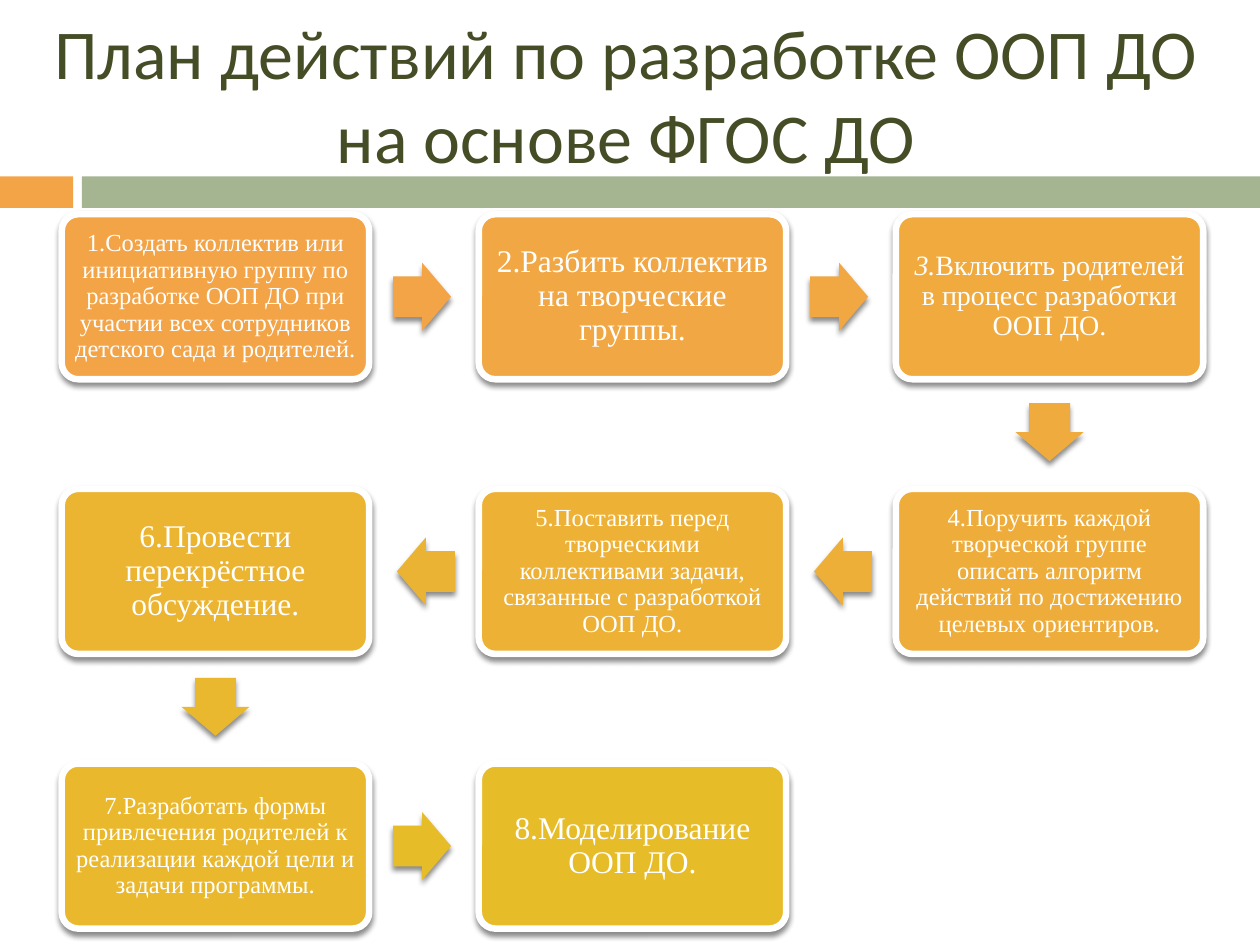
import pptx
import pptx.util
import pptx.dml.color
import pptx.enum.shapes
import pptx.enum.text
from lxml import etree

Inches, Pt = pptx.util.Inches, pptx.util.Pt
Shape = pptx.enum.shapes.MSO_SHAPE
Align = pptx.enum.text.PP_ALIGN
Anchor = pptx.enum.text.MSO_ANCHOR
Fit = pptx.enum.text.MSO_AUTO_SIZE

# Content
TITLE = "План действий по разработке ООП ДО на основе ФГОС ДО"
# column, row, fill, text size, text
STEPS = [
    (0, 0, "F3A447", "small", "1.Создать коллектив или инициативную группу по разработке ООП ДО "
                              "при участии всех сотрудников детского сада и родителей."),
    (1, 0, "F1A743", "large", "2.Разбить коллектив на творческие группы."),
    (2, 0, "F0AA3E", "medium", "3.Включить родителей в процесс разработки ООП ДО."),
    (2, 1, "EEAD3A", "small", "4.Поручить каждой творческой группе описать алгоритм действий "
                              "по достижению целевых ориентиров."),
    (1, 1, "EDB135", "small", "5.Поставить перед творческими коллективами задачи, "
                              "связанные с разработкой ООП ДО."),
    (0, 1, "EBB431", "large", "6.Провести перекрёстное обсуждение."),
    (0, 2, "E9B82D", "small", "7.Разработать формы привлечения родителей к реализации "
                              "каждой цели и задачи программы."),
    (1, 2, "E7BC29", "large", "8.Моделирование ООП ДО."),
]
ARROWS = ["F3A447", "F1A742", "EFAB3D", "EDAF38", "EBB333", "E9B82E", "E7BC29"]
SLANTED = "3."  # step number set in italics

THEME = {
    "title": {"name": "Calibri", "size": 40, "color": "444D26"},
    "small": {"name": "Times New Roman", "size": 14, "color": "FFFFFF"},
    "medium": {"name": "Times New Roman", "size": 16, "color": "FFFFFF"},
    "large": {"name": "Times New Roman", "size": 18, "color": "FFFFFF"},
    "edge": "FFFFFF", "orange": "F3A447", "green": "A5B592",
}

# Grid: first box, box size, steps between boxes, arrow size and gap
LEFT, TOP, WIDE, HIGH = 0.49, 1.7, 2.44, 1.31
STEP_X, STEP_Y = 3.31, 2.18
LONG, THICK, GAP = 0.46, 0.54, 0.19


def color(code):
    return pptx.dml.color.RGBColor.from_string(code)


def style(font, look):
    values = {"name": look["name"], "size": Pt(look["size"]), "bold": False}
    for key, value in values.items():
        setattr(font, key, value)
    font.color.rgb = color(look["color"])


def setup(frame, inset=None):
    values = {"word_wrap": True, "auto_size": Fit.NONE, "vertical_anchor": Anchor.MIDDLE}
    if inset is not None:
        for side in ("left", "right", "top", "bottom"):
            values["margin_" + side] = Inches(inset)
    for key, value in values.items():
        setattr(frame, key, value)


def draw(kind, x, y, w, h, fill):
    shape = slide.shapes.add_shape(kind, *map(Inches, (x, y, w, h)))
    shape.shadow.inherit = False
    shape.fill.solid()
    shape.fill.fore_color.rgb = color(fill)
    shape.line.fill.background()
    return shape


def shade(shape):
    effects = shape.element.spPr.find(pptx.oxml.ns.qn("a:effectLst"))
    effects.append(etree.fromstring(
        '<a:outerShdw xmlns:a="http://schemas.openxmlformats.org/drawingml/2006/main" '
        f'blurRad="{Pt(3)}" dist="{Pt(2.4)}" dir="5400000" rotWithShape="0">'
        '<a:srgbClr val="000000"><a:alpha val="45000"/></a:srgbClr></a:outerShdw>'))


def add_box(col, row, fill, size, text):
    box = draw(Shape.ROUNDED_RECTANGLE, LEFT + col * STEP_X, TOP + row * STEP_Y, WIDE, HIGH, fill)
    box.adjustments[0] = 0.1
    box.line.color.rgb = color(THEME["edge"])
    box.line.width = Pt(3.75)
    shade(box)
    setup(box.text_frame, 0.06 if size == "small" else 0.07)
    para = box.text_frame.paragraphs[0]
    para.alignment = Align.CENTER
    para.line_spacing = 0.9
    parts = [SLANTED, text[len(SLANTED):]] if text.startswith(SLANTED) else [text]
    for part in parts:
        run = para.add_run()
        run.text = part
        style(run.font, THEME[size])
        run.font.italic = part == SLANTED


def add_arrow(start, end, fill):
    dx, dy = end[0] - start[0], end[1] - start[1]
    x = LEFT + start[0] * STEP_X + WIDE / 2 + dx * (WIDE / 2 + GAP + LONG / 2)
    y = TOP + start[1] * STEP_Y + HIGH / 2 + dy * (HIGH / 2 + GAP + LONG / 2)
    arrow = draw(Shape.RIGHT_ARROW, x - LONG / 2, y - THICK / 2, LONG, THICK, fill)
    arrow.adjustments[0], arrow.adjustments[1] = 0.6, 0.5
    arrow.rotation = {(1, 0): 0, (0, 1): 90, (-1, 0): 180}[dx, dy]
    shade(arrow)


deck = pptx.Presentation()
deck.slide_width, deck.slide_height = Inches(10), Inches(7.5)
slide = deck.slides.add_slide(deck.slide_layouts[5])

# Band under the title
draw(Shape.RECTANGLE, 0, 1.4, 0.58, 0.25, THEME["orange"])
draw(Shape.RECTANGLE, 0.65, 1.4, 9.35, 0.25, THEME["green"])

# Title
title = slide.shapes.title
place = {"left": 0.12, "top": 0.25, "width": 9.69, "height": 0.98}
for key, value in place.items():
    setattr(title, key, Inches(value))
title.text_frame.text = TITLE
setup(title.text_frame)
head = title.text_frame.paragraphs[0]
head.alignment = Align.CENTER
style(head.runs[0].font, THEME["title"])

# Steps, each followed by an arrow to the next
for step in STEPS:
    add_box(*step)
for here, after, fill in zip(STEPS, STEPS[1:], ARROWS):
    add_arrow(here[:2], after[:2], fill)

deck.save("out.pptx")
